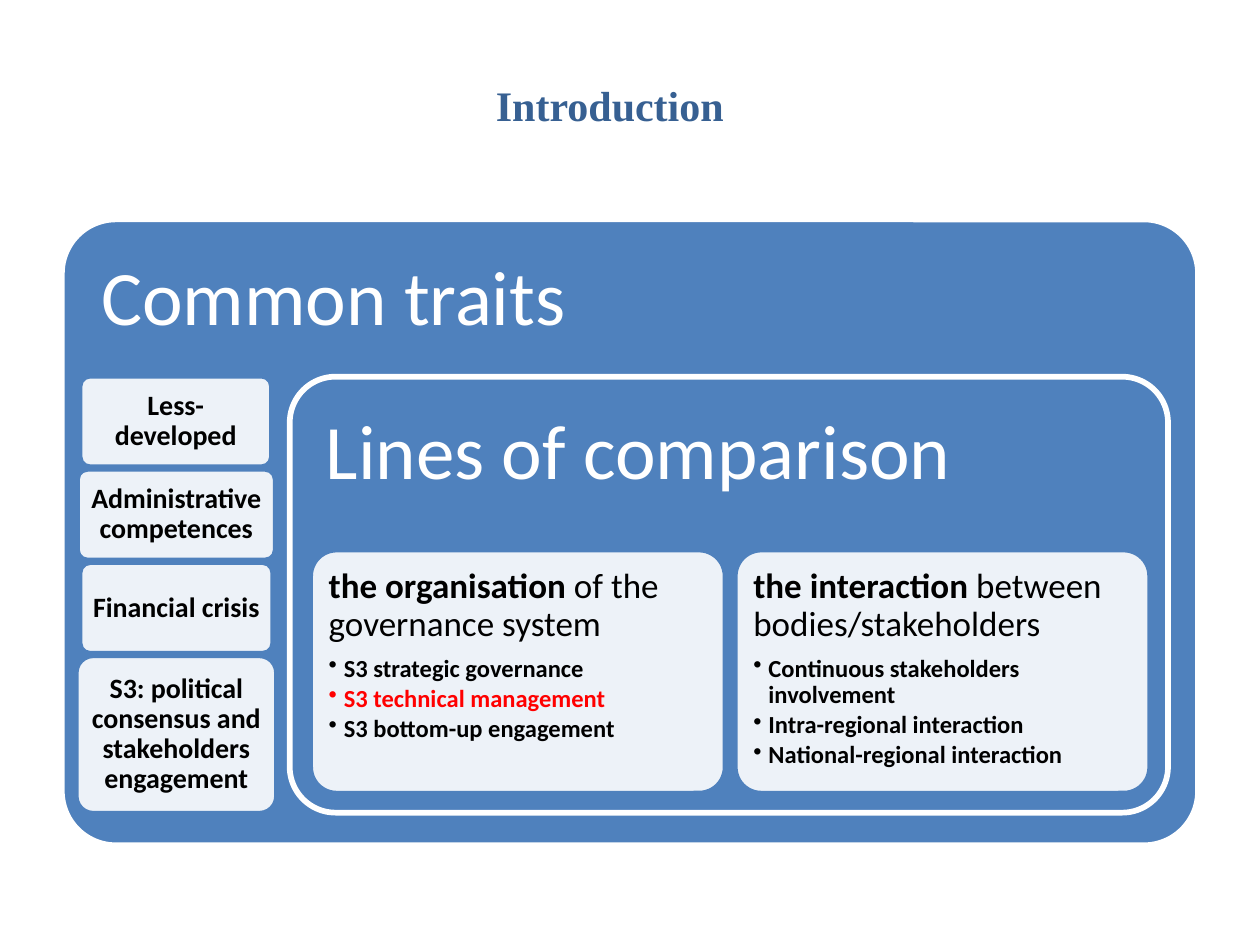
from lxml import etree
from pptx import Presentation
from pptx.dml.color import RGBColor
from pptx.enum.shapes import MSO_SHAPE
from pptx.enum.text import MSO_ANCHOR, PP_ALIGN
from pptx.oxml.ns import qn
from pptx.util import Inches, Pt

BLUE, WHITE, BLACK, RED = "4F81BD", "FFFFFF", "000000", "FF0000"


def add_box(left, top, width, height, fill, line, line_width, corner, inset, opacity=None):
    shape = slide.shapes.add_shape(MSO_SHAPE.ROUNDED_RECTANGLE, Inches(left), Inches(top),
                                   Inches(width), Inches(height))
    shape.shadow.inherit = False
    shape.adjustments[0] = corner
    shape.fill.solid()
    shape.fill.fore_color.rgb = RGBColor.from_string(fill)
    if opacity:
        color = shape.fill._xPr.find(qn("a:solidFill"))[0]
        etree.SubElement(color, qn("a:alpha"), val=str(opacity * 1000))
    shape.line.color.rgb = RGBColor.from_string(line)
    shape.line.width = Pt(line_width)
    frame = shape.text_frame
    frame.word_wrap = True
    frame.vertical_anchor = MSO_ANCHOR.TOP
    frame.margin_left = frame.margin_right = Inches(inset)
    frame.margin_top = frame.margin_bottom = Inches(inset)
    return frame


def write(paragraph, runs, size, color, align=PP_ALIGN.LEFT, after=0.35, font="Calibri"):
    paragraph.alignment = align
    paragraph.line_spacing = 0.9
    paragraph.space_after = Pt(round(size * after, 1))
    for text, bold in runs:
        run = paragraph.add_run()
        run.text = text
        run.font.name = font
        run.font.size = Pt(size)
        run.font.bold = bold
        run.font.color.rgb = RGBColor.from_string(color)


presentation = Presentation()
presentation.slide_width, presentation.slide_height = Inches(10), Inches(7.5)
slide = presentation.slides.add_slide(presentation.slide_layouts[5])

# Title
title = slide.shapes.title
title.left, title.top, title.width, title.height = Inches(0.34), Inches(0.23), Inches(9), Inches(1.25)
title.text_frame.vertical_anchor = MSO_ANCHOR.MIDDLE
write(title.text_frame.paragraphs[0], [("Introduction", True)], 24, "376092",
      PP_ALIGN.CENTER, 0, "Times New Roman")

# Outer and inner panels
panels = [
    ("Common traits", 0.5, 1.75, 9, 4.95, 2, 0.085),
    ("Lines of comparison", 2.3, 2.99, 6.97, 3.46, 3.25, 0.105),
]
for heading, left, top, width, height, line_width, corner in panels:
    frame = add_box(left, top, width, height, BLUE, WHITE, line_width, corner, 0.18)
    write(frame.paragraphs[0], [(heading, False)], 44, WHITE)

# Column of common traits
traits = [
    ("Less-developed", 0.64, 1.51, 0.71),
    ("Administrative competences", 0.62, 1.56, 0.71),
    ("Financial crisis", 0.64, 1.52, 0.71),
    ("S3: political consensus and stakeholders engagement", 0.61, 1.58, 1.24),
]
for row, (trait, left, width, height) in enumerate(traits):
    frame = add_box(left, 2.99 + row * 0.74, width, height, WHITE, BLUE, 2, 0.105, 0.07, 90)
    frame.vertical_anchor = MSO_ANCHOR.MIDDLE
    write(frame.paragraphs[0], [(trait, True)], 16, BLACK, PP_ALIGN.CENTER)

# Cards for the two lines of comparison
cards = [
    (2.47, [("the organisation", True), (" of the governance system", False)],
     [("S3 strategic governance", BLACK), ("S3 technical management", RED),
      ("S3 bottom-up engagement", BLACK)]),
    (5.84, [("the interaction ", True), ("between bodies/stakeholders", False)],
     [("Continuous stakeholders involvement", BLACK), ("Intra-regional interaction", BLACK),
      ("National-regional interaction", BLACK)]),
]
for left, heading_runs, points in cards:
    frame = add_box(left, 4.37, 3.28, 1.92, WHITE, BLUE, 2, 0.105, 0.08, 90)
    write(frame.paragraphs[0], heading_runs, 20, BLACK)
    for point, color in points:
        paragraph = frame.add_paragraph()
        paragraph.level = 1
        write(paragraph, [(point, True)], 14, color, after=0.15)
        properties = paragraph._p.get_or_add_pPr()
        properties.set("marL", str(Inches(0.12)))
        properties.set("indent", str(Inches(-0.12)))
        etree.SubElement(properties, qn("a:buChar"), char="•")

presentation.save("out.pptx")
